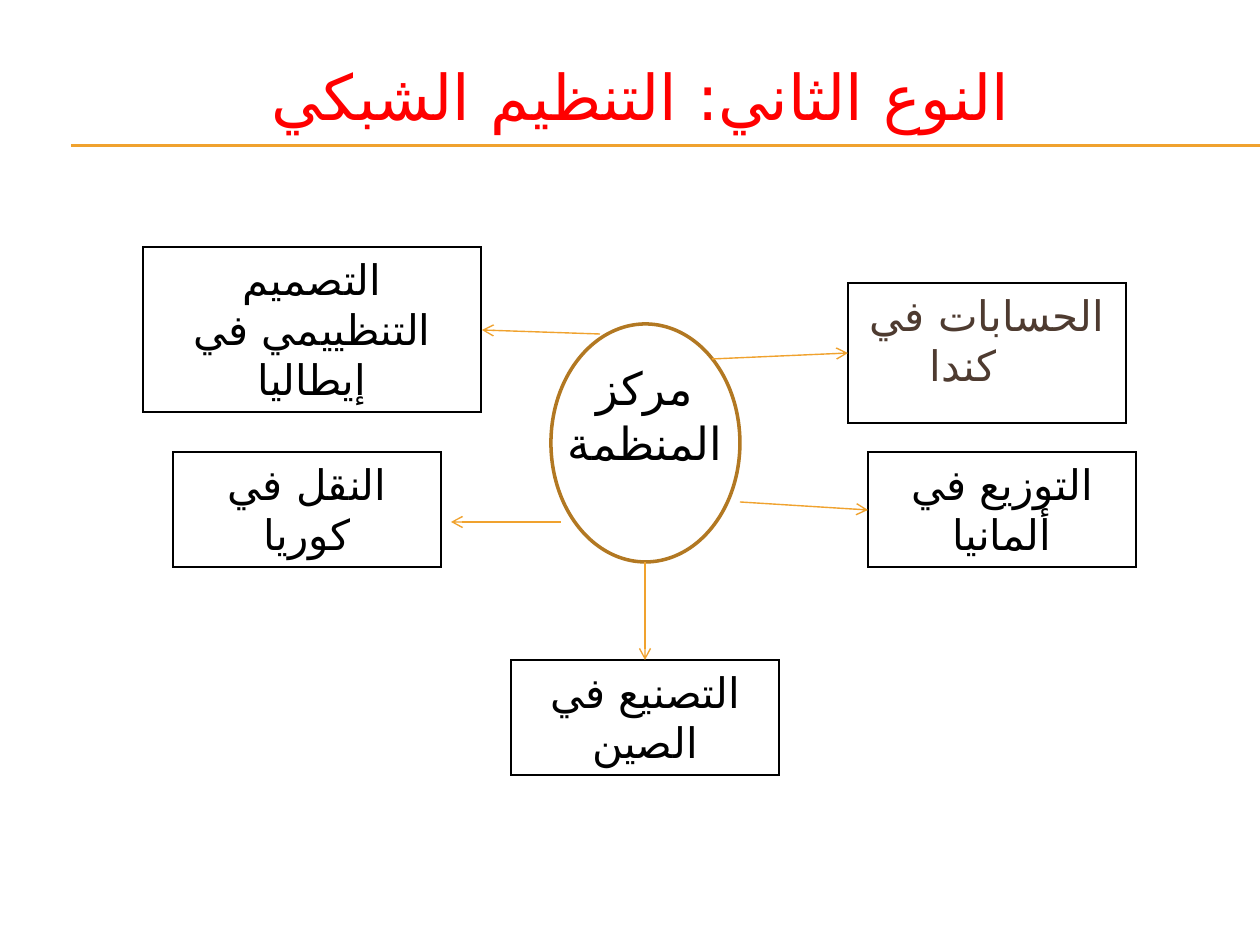
from dataclasses import dataclass

from lxml import etree
from pptx import Presentation
from pptx import util as u
from pptx.dml.color import RGBColor
from pptx.enum import shapes, text
from pptx.oxml import ns

EMU_PER_PX = 914400 / 126


@dataclass(frozen=True)
class Theme:
    """Colours, fonts and point sizes of the slide."""
    font: str = "Cabin"
    arabic_font: str = "DejaVu Sans"
    title: str = "FF0000"
    ink: str = "000000"
    brown: str = "4E3B30"
    orange: str = "F0A22E"
    ring: str = "B27822"
    title_size: float = 36
    center_size: float = 26
    box_size: float = 24
    rule_width: float = 0.75
    arrow_width: float = 0.8
    ring_width: float = 2


THEME = Theme()

UNITS = [
    ("الحسابات في كندا", (848, 283, 278, 140), THEME.brown, 48),
    ("التصميم التنظييمي في إيطاليا", (143, 247, 338, 165), THEME.ink, 0),
    ("النقل في كوريا", (173, 452, 268, 115), THEME.ink, 0),
    ("التوزيع في ألمانيا", (868, 452, 268, 115), THEME.ink, 0),
    ("التصنيع في الصين", (511, 660, 268, 115), THEME.ink, 0),
]

ARROWS = [
    (712, 359, 848, 353),
    (740, 502, 868, 510),
    (600, 334, 482, 330),
    (561, 522, 451, 522),
    (645, 562, 645, 660),
]

RULES = [(71, 145, 1260, 145), (71, 146, 1260, 146)]


def px(*lengths):
    """Turn pixel lengths into EMU."""
    return [u.Emu(round(length * EMU_PER_PX)) for length in lengths]


def write_text(shape, words, size, color, anchor=text.MSO_ANCHOR.TOP, hanging=0):
    """Write one centred right-to-left paragraph into a shape."""
    frame = shape.text_frame
    frame.word_wrap = True
    frame.vertical_anchor = anchor
    paragraph = frame.paragraphs[0]
    paragraph.alignment = text.PP_ALIGN.CENTER
    properties = paragraph._p.get_or_add_pPr()
    properties.set("rtl", "1")
    if hanging:
        indent = px(hanging)[0]
        properties.set("marL", str(indent))
        properties.set("indent", str(-indent))
    run = paragraph.add_run()
    run.text = words
    run.font.size = u.Pt(size)
    run.font.name = THEME.font
    run.font.color.rgb = RGBColor.from_string(color)
    script_font = etree.SubElement(run._r.get_or_add_rPr(), ns.qn("a:cs"))
    script_font.set("typeface", THEME.arabic_font)


def add_label(slide, words, bounds, size, color, anchor):
    """Add a text box without an outline."""
    shape = slide.shapes.add_textbox(*px(*bounds))
    write_text(shape, words, size, color, anchor)


def add_outline(slide, kind, bounds, color, width):
    """Add an unfilled shape with a coloured, mitred outline."""
    shape = slide.shapes.add_shape(kind, *px(*bounds))
    shape.shadow.inherit = False
    shape.fill.background()
    shape.line.color.rgb = RGBColor.from_string(color)
    shape.line.width = u.Pt(width)
    outline = shape._element.spPr.find(ns.qn("a:ln"))
    etree.SubElement(outline, ns.qn("a:miter")).set("lim", "800000")
    return shape


def add_unit(slide, words, bounds, color, hanging):
    """Add a framed box naming one unit of the network."""
    shape = add_outline(slide, shapes.MSO_SHAPE.RECTANGLE, bounds, THEME.ink, THEME.rule_width)
    write_text(shape, words, THEME.box_size, color, hanging=hanging)


def add_line(slide, ends, width, arrow=False):
    """Add a straight line, with an open arrowhead at its end if asked."""
    line = slide.shapes.add_connector(shapes.MSO_CONNECTOR.STRAIGHT, *px(*ends))
    line.line.color.rgb = RGBColor.from_string(THEME.orange)
    line.line.width = u.Pt(width)
    properties = line._element.spPr
    if arrow:
        head = etree.SubElement(properties.find(ns.qn("a:ln")), ns.qn("a:tailEnd"))
        head.set("type", "arrow")
    etree.SubElement(properties, ns.qn("a:effectLst"))


def main():
    """Build the network organisation slide and save it."""
    presentation = Presentation()
    presentation.slide_width, presentation.slide_height = px(1260, 945)
    slide = presentation.slides.add_slide(presentation.slide_layouts[6])
    for ends in RULES:
        add_line(slide, ends, THEME.rule_width)
    add_label(slide, "النوع الثاني: التنظيم الشبكي", (42, 37, 1197, 116),
              THEME.title_size, THEME.title, text.MSO_ANCHOR.MIDDLE)
    for unit in UNITS:
        add_unit(slide, *unit)
    add_label(slide, "مركز المنظمة", (511, 354, 268, 123),
              THEME.center_size, THEME.ink, text.MSO_ANCHOR.TOP)
    add_outline(slide, shapes.MSO_SHAPE.FLOWCHART_CONNECTOR, (551, 324, 189, 238),
                THEME.ring, THEME.ring_width)
    for ends in ARROWS:
        add_line(slide, ends, THEME.arrow_width, arrow=True)
    presentation.save("out.pptx")


if __name__ == "__main__":
    main()
